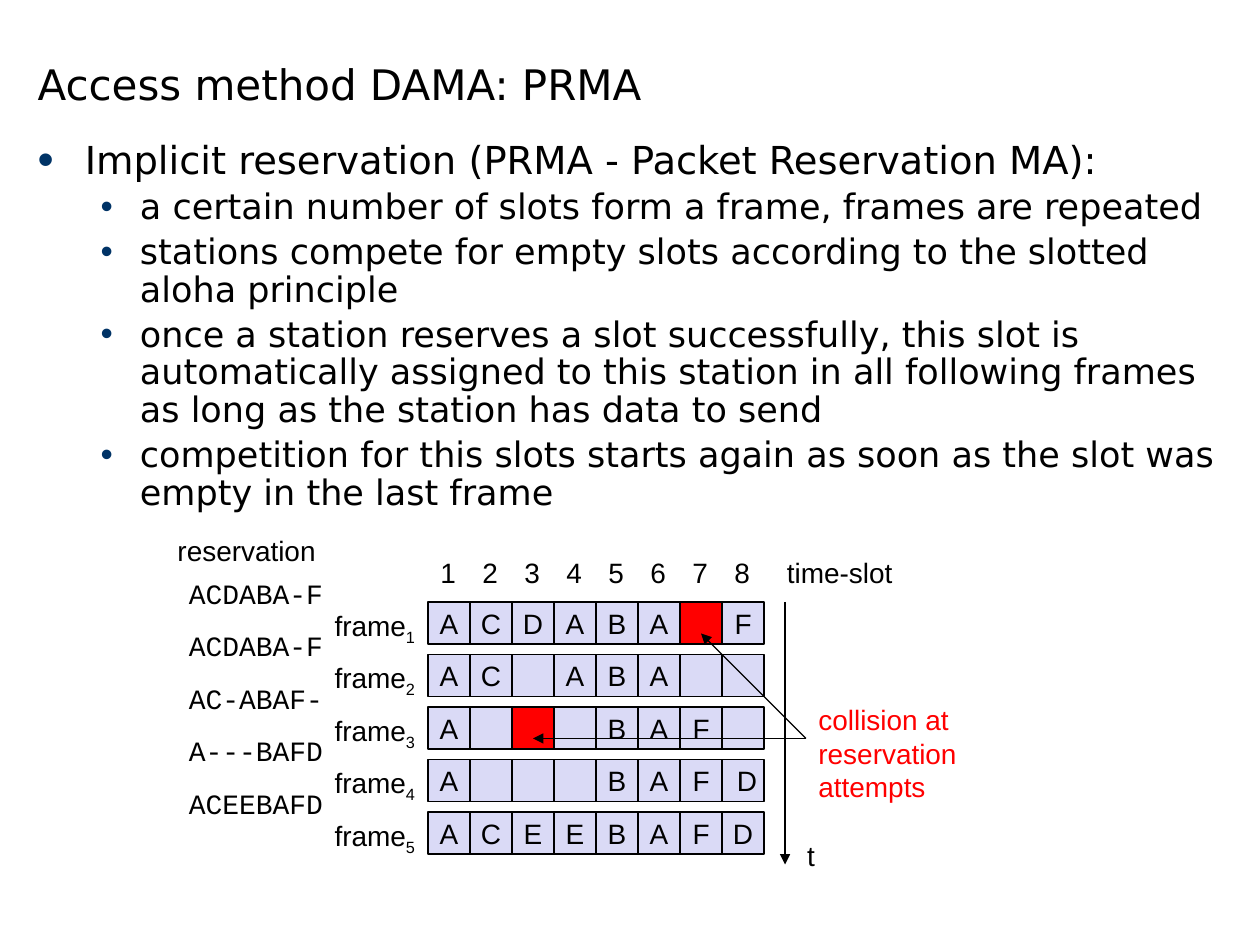
from dataclasses import dataclass

from lxml import etree
from pptx import Presentation
from pptx.dml.color import RGBColor
from pptx.enum import shapes, text
from pptx.oxml import ns
from pptx.util import Pt


@dataclass(frozen=True)
class Theme:
    """Colours, fonts and type sizes of the slide."""
    ink: str = "000000"
    bullet: str = "003366"
    slot: str = "DADAF6"
    collision: str = "FF0000"
    prose: str = "DejaVu Sans"
    label: str = "Arial"
    code: str = "Courier New"
    title_size: int = 24
    lead_size: int = 22
    point_size: int = 20
    label_size: int = 16
    line: float = 0.75


THEME = Theme()
CELL = 24
PITCH = 30
COLLISION = "*"
LEAD = "Implicit reservation (PRMA - Packet Reservation MA):"
POINTS = [
    "a certain number of slots form a frame, frames are repeated",
    "stations compete for empty slots according to the slotted aloha principle",
    "once a station reserves a slot successfully, this slot is automatically "
    "assigned to this station in all following frames as long as the station "
    "has data to send",
    "competition for this slots starts again as soon as the slot was empty in "
    "the last frame",
]
FRAMES = [
    ("ACDABA-F", "ACDABA*F"),
    ("ACDABA-F", "AC ABA  "),
    ("AC-ABAF-", "A * BAF "),
    ("A---BAFD", [*"A   BAF", " D"]),
    ("ACEEBAFD", "ACEEBAFD"),
]


def colour(code):
    """Turn a hex code into a colour."""
    return RGBColor.from_string(code)


def write(para, words, font=THEME.label, size=THEME.label_size, ink=THEME.ink, sub=False):
    """Add a formatted span of text to a paragraph."""
    span = para.add_run()
    span.text = words
    span.font.name = font
    span.font.size = Pt(size)
    span.font.color.rgb = colour(ink)
    if sub:
        span.font._element.set("baseline", "-25000")


def add_box(page, left, top, width, height, wrap=False, anchor=text.MSO_ANCHOR.TOP):
    """Add an empty text box and return its text frame."""
    frame = page.shapes.add_textbox(Pt(left), Pt(top), Pt(width), Pt(height)).text_frame
    frame.word_wrap = wrap
    frame.auto_size = text.MSO_AUTO_SIZE.NONE if wrap else text.MSO_AUTO_SIZE.SHAPE_TO_FIT_TEXT
    frame.vertical_anchor = anchor
    return frame


def add_label(page, left, top, width, words, height=26, centred=False, **style):
    """Add a one-line label and return its paragraph."""
    anchor = text.MSO_ANCHOR.MIDDLE if centred else text.MSO_ANCHOR.TOP
    para = add_box(page, left, top, width, height, anchor=anchor).paragraphs[0]
    if centred:
        para.alignment = text.PP_ALIGN.CENTER
    write(para, words, **style)
    return para


def add_bullet(para, margin, indent, scale=100):
    """Give a paragraph a hanging bullet."""
    props = para._p.get_or_add_pPr()
    props.set("marL", str(Pt(margin)))
    props.set("indent", str(Pt(-indent)))
    tint = etree.SubElement(props, ns.qn("a:buClr"))
    etree.SubElement(tint, ns.qn("a:srgbClr"), val=THEME.bullet)
    etree.SubElement(props, ns.qn("a:buSzPct"), val=str(scale * 1000))
    etree.SubElement(props, ns.qn("a:buFont"), typeface=THEME.label)
    etree.SubElement(props, ns.qn("a:buChar"), char="•")


def add_arrow(page, start, end):
    """Draw a thin line with an arrowhead at its end."""
    line = page.shapes.add_connector(
        shapes.MSO_CONNECTOR.STRAIGHT, *(Pt(value) for value in (*start, *end)))
    line.line.color.rgb = colour(THEME.ink)
    line.line.width = Pt(THEME.line)
    etree.SubElement(line.line._get_or_add_ln(), ns.qn("a:tailEnd"), type="triangle")
    etree.SubElement(line._element.spPr, ns.qn("a:effectLst"))


def add_slot(page, left, top, mark):
    """Draw one slot with its station, or a collision."""
    hit = mark == COLLISION
    slot = page.shapes.add_shape(
        shapes.MSO_SHAPE.RECTANGLE, Pt(left), Pt(top), Pt(CELL), Pt(CELL))
    slot.shadow.inherit = False
    slot.fill.solid()
    slot.fill.fore_color.rgb = colour(THEME.collision if hit else THEME.slot)
    slot.line.color.rgb = colour(THEME.ink)
    slot.line.width = Pt(THEME.line)
    if hit or mark == " ":
        return
    frame = slot.text_frame
    frame.word_wrap = False
    frame.vertical_anchor = text.MSO_ANCHOR.MIDDLE
    frame.paragraphs[0].alignment = text.PP_ALIGN.CENTER
    write(frame.paragraphs[0], mark)


def add_title(page, left, top, width, height):
    """Place the slide title at the foot of its box."""
    frame = add_box(page, left, top, width, height, wrap=True, anchor=text.MSO_ANCHOR.BOTTOM)
    write(frame.paragraphs[0], "Access method DAMA: PRMA",
          font=THEME.prose, size=THEME.title_size)


def add_body(page, left, top, width, height):
    """Place the lead bullet and its sub-points."""
    frame = add_box(page, left, top, width, height, wrap=True)
    lead = frame.paragraphs[0]
    lead.line_spacing = 0.9
    add_bullet(lead, 27, 27, scale=120)
    write(lead, LEAD, font=THEME.prose, size=THEME.lead_size)
    for point in POINTS:
        para = frame.add_paragraph()
        para.level = 1
        para.line_spacing = 0.9
        para.space_before = Pt(THEME.point_size * 0.2)
        add_bullet(para, 58.5, 22.5)
        write(para, point, font=THEME.prose, size=THEME.point_size)


def add_frames(page, left, top):
    """Place the slot grid with its headings, frame names and reservations."""
    add_label(page, left - 150.5, top - 42.5, 93.6, "reservation", centred=True)
    for column in range(8):
        add_label(page, left + column * CELL, top - 30, 23, str(column + 1))
    add_label(page, left + 198, top - 30, 75, "time-slot")
    for row, (reservation, slots) in enumerate(FRAMES):
        base = top + row * PITCH
        add_label(page, left - 144, base - 18, 91.4, reservation,
                  centred=True, font=THEME.code)
        name = add_label(page, left - 60.5, base, 61, "frame")
        write(name, str(row + 1), sub=True)
        for column, mark in enumerate(slots):
            add_slot(page, left + column * CELL, base, mark)


def add_collisions(page, left, top):
    """Place the time axis and the arrows from the note to both collisions."""
    origin = (left + 216, top + 78)
    for target in [(left + 156, top + 18), (left + 60, top + 78)]:
        add_arrow(page, origin, target)
    add_arrow(page, (left + 204, top), (left + 204, top + 150))
    add_label(page, left + 209.5, top + 132, 18.7, "t", centred=True)
    note = add_box(page, left + 216, top + 54, 98, 65)
    for index, words in enumerate(["collision at", "reservation", "attempts"]):
        para = note.add_paragraph() if index else note.paragraphs[0]
        write(para, words, ink=THEME.collision)


def main():
    """Build the slide and save it."""
    deck = Presentation()
    deck.slide_width, deck.slide_height = Pt(720), Pt(540)
    page = deck.slides.add_slide(deck.slide_layouts[6])
    add_title(page, 14.4, 0, 476, 65.5)
    add_body(page, 14.4, 77, 692, 232.5)
    add_frames(page, 244.6, 344)
    add_collisions(page, 244.6, 344)
    deck.save("out.pptx")


if __name__ == "__main__":
    main()
